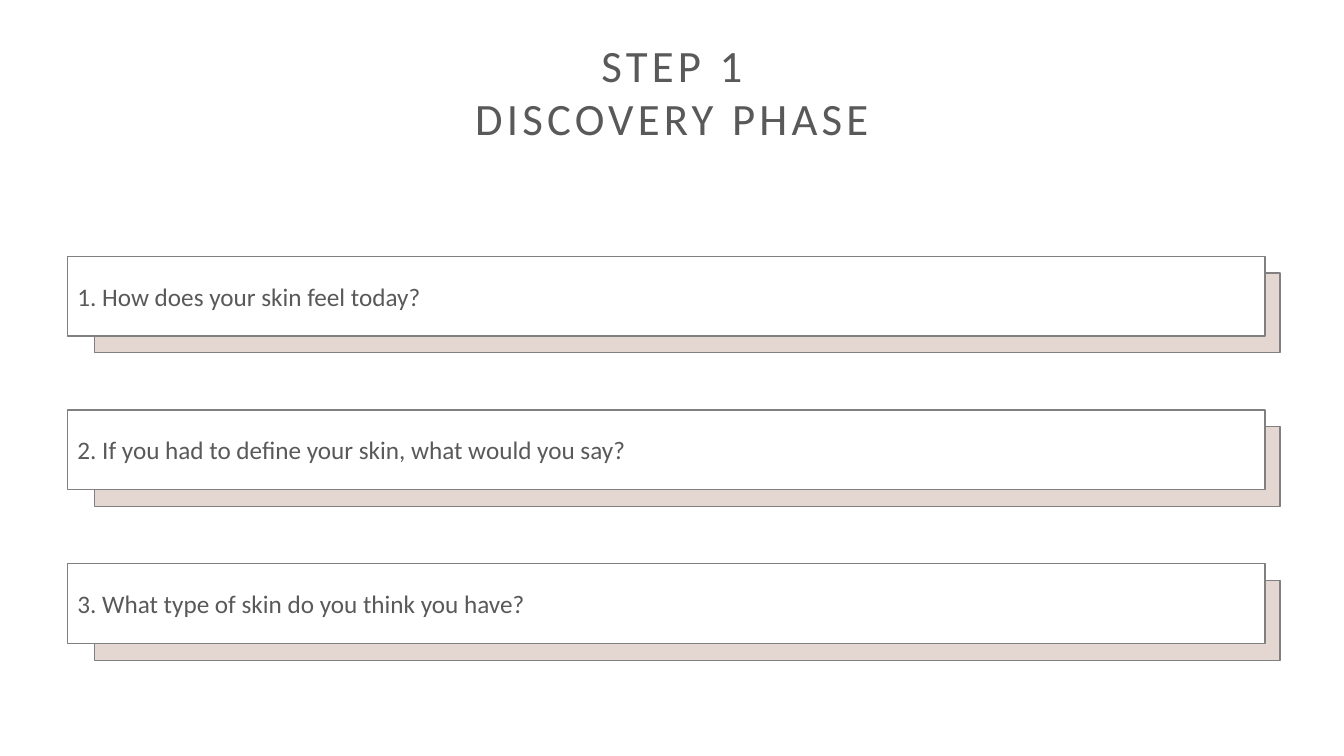
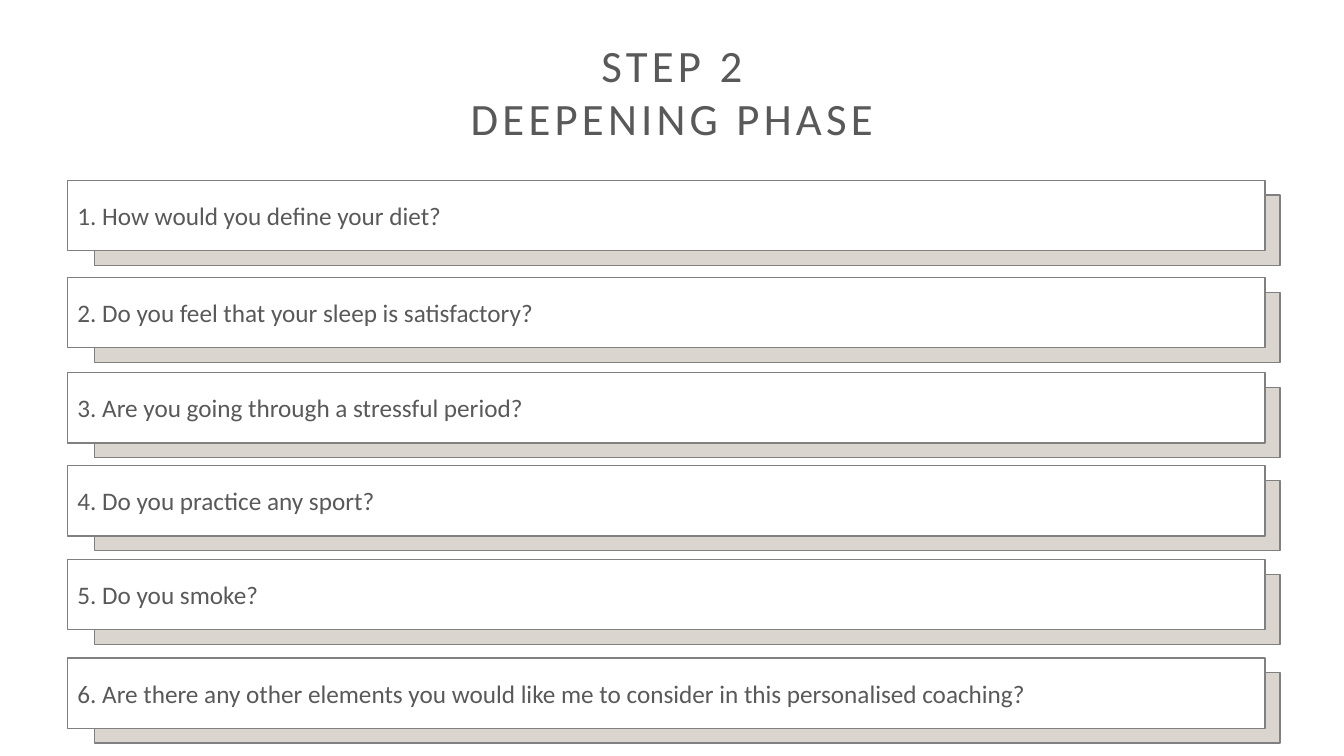
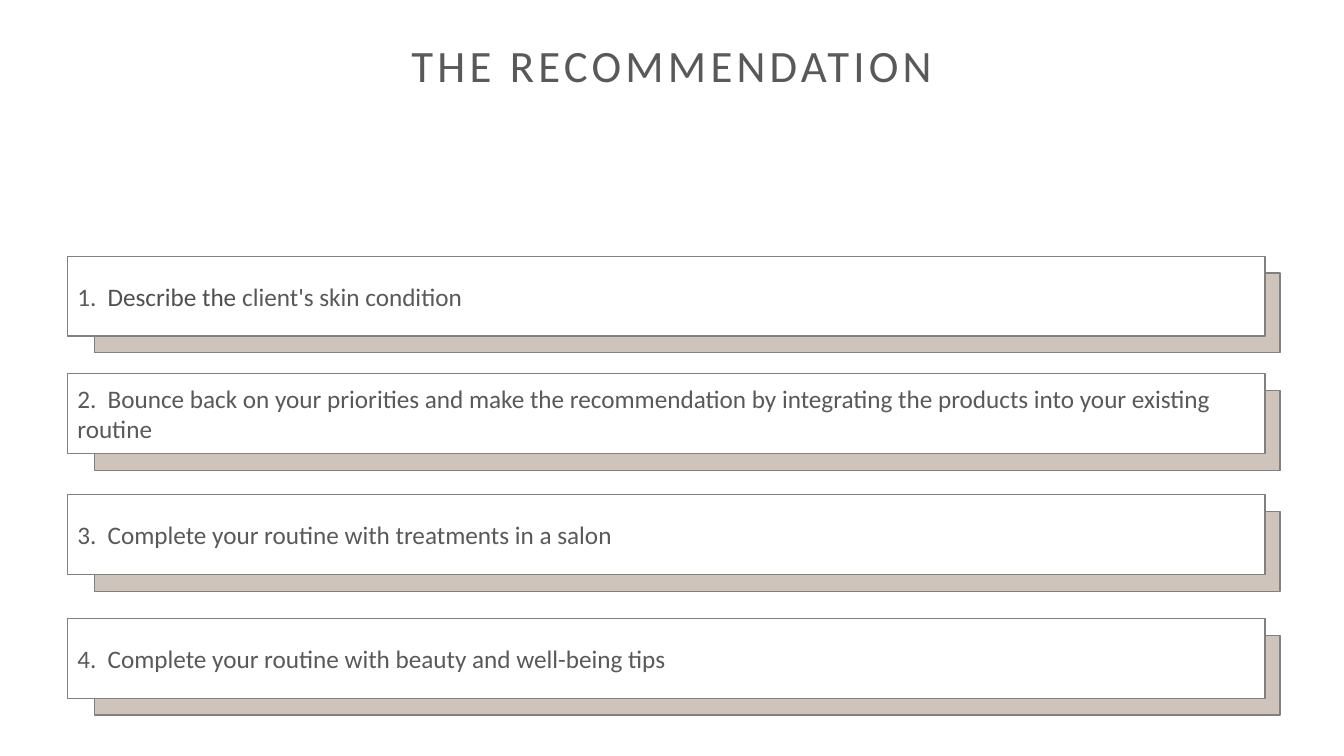
import pptx
import pptx.dml.color
import pptx.enum.shapes
import pptx.enum.text
import pptx.oxml
import pptx.oxml.ns
import pptx.util

Pt = pptx.util.Pt
ALIGN = pptx.enum.text.PP_ALIGN
ANCHOR = pptx.enum.text.MSO_ANCHOR
PROCESS = pptx.enum.shapes.MSO_SHAPE.FLOWCHART_PROCESS
TITLE_ONLY = 5

FONT = "Calibri"
WHITE, TEXT, DARK, OUTLINE = "FFFFFF", "595959", "4F4E51", "808080"


def rgb(value):
    return pptx.dml.color.RGBColor.from_string(value)


def write(p, text, size=18, color=TEXT, align=ALIGN.LEFT, spacing=0, tab=None):
    """Add one run of text to paragraph p."""
    p.alignment = align
    if tab:
        p._p.get_or_add_pPr().append(pptx.oxml.parse_xml(
            f'<a:tabLst {pptx.oxml.ns.nsdecls("a")}>'
            f'<a:tab pos="{Pt(tab)}" algn="l"/></a:tabLst>'))
    r = p.add_run()
    r.text = text
    r.font.name, r.font.size = FONT, Pt(size)
    r.font.color.rgb = rgb(color)
    if spacing:
        r._r.get_or_add_rPr().set("spc", str(spacing * 100))


class Deck:
    width, height = 960, 540
    card_left, card_width = 48.2, 855.4
    back_left, back_width = 67.7, 846.7
    drop = 0.21     # offset of the back panel, as a share of the card height
    tab = 21.6      # where the text starts after a tabbed number

    def __init__(self):
        self.prs = pptx.Presentation()
        self.prs.slide_width = Pt(self.width)
        self.prs.slide_height = Pt(self.height)

    def slide(self, *title):
        self.s = self.prs.slides.add_slide(self.prs.slide_layouts[TITLE_ONLY])
        sp = self.s.shapes.title
        sp.left, sp.top, sp.width, sp.height = Pt(0), Pt(23), Pt(self.width), Pt(124)
        tf = sp.text_frame
        tf.auto_size = pptx.enum.text.MSO_AUTO_SIZE.NONE
        tf.vertical_anchor = ANCHOR.TOP
        for i, line in enumerate(title):
            p = tf.add_paragraph() if i else tf.paragraphs[0]
            write(p, line, size=32, align=ALIGN.CENTER, spacing=3)

    def panel(self, group, left, top, width, height, fill):
        sp = group.shapes.add_shape(PROCESS, Pt(left), Pt(top), Pt(width), Pt(height))
        sp.shadow.inherit = False
        sp.fill.solid()
        sp.fill.fore_color.rgb = rgb(fill)
        sp.line.color.rgb = rgb(OUTLINE)
        sp.line.width = Pt(1)
        return sp

    def card(self, top, height, fill, pieces, tab=None):
        """White card over a tinted panel; pieces are (text, colour) pairs."""
        group = self.s.shapes.add_group_shape()
        self.panel(group, self.back_left, top + self.drop * height,
                   self.back_width, height, fill)
        sp = self.panel(group, self.card_left, top, self.card_width, height, WHITE)
        tf = sp.text_frame
        tf.word_wrap = True
        tf.vertical_anchor = ANCHOR.MIDDLE
        for i, (text, color) in enumerate(pieces):
            write(tf.paragraphs[0], text, color=color, tab=None if i else tab)

    def cards(self, tops, height, fill, items, gap=" ", tab=None):
        for n, (top, item) in enumerate(zip(tops, items), 1):
            pieces = [(item, TEXT)] if isinstance(item, str) else item
            self.card(top, height, fill, [(f"{n}.{gap}", TEXT), *pieces], tab)


def main():
    deck = Deck()

    # Step 1
    deck.slide("STEP 1", "DISCOVERY PHASE")
    deck.cards([183, 292.8, 402.6], 57, "E4D6D0", [
        "How does your skin feel today?",
        "If you had to define your skin, what would you say?",
        "What type of skin do you think you have?",
    ])

    # Step 2
    deck.slide("STEP 2", "DEEPENING PHASE")
    deck.cards([128.8, 198.2, 266.2, 332.6, 399.6, 470], 50.2, "DAD5CF", [
        "How would you define your diet?",
        "Do you feel that your sleep is satisfactory?",
        "Are you going through a stressful period?",
        "Do you practice any sport?",
        "Do you smoke?",
        "Are there any other elements you would like me to consider"
        " in this personalised coaching?",
    ])

    # Recommendation
    deck.slide("THE RECOMMENDATION")
    deck.cards([183, 267, 353.4, 441.8], 57, "CEC4BC", [
        [("Describe the ", DARK), ("client's skin condition", TEXT)],
        "Bounce back on your priorities and make the recommendation"
        " by integrating the products into your existing routine",
        "Complete your routine with treatments in a salon",
        "Complete your routine with beauty and well-being tips",
    ], gap="\t", tab=deck.tab)

    deck.prs.save("out.pptx")


if __name__ == "__main__":
    main()
